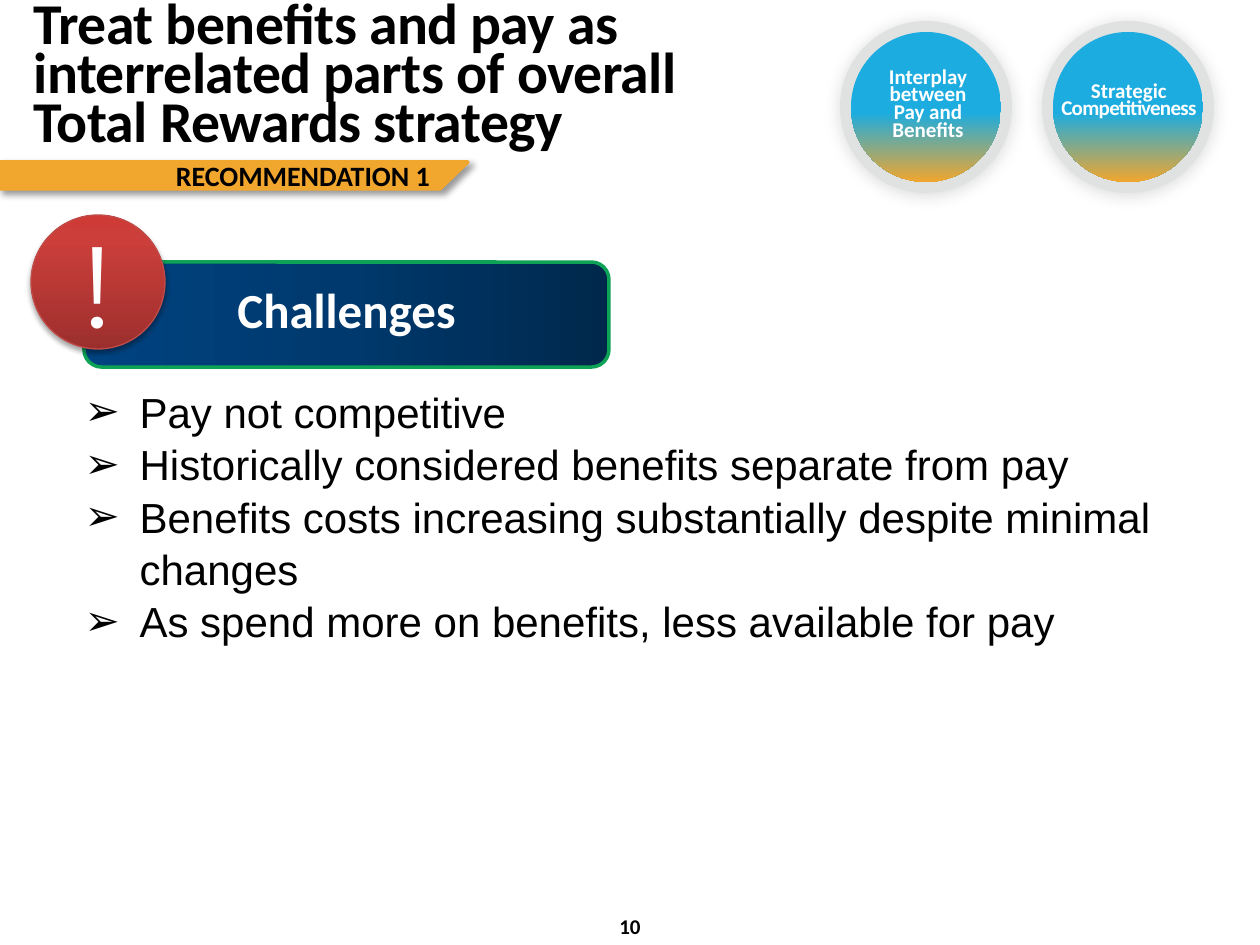
from pptx import Presentation
from pptx.dml.color import RGBColor
from pptx.enum.shapes import MSO_SHAPE
from pptx.enum.text import MSO_ANCHOR, MSO_AUTO_SIZE, PP_ALIGN
from pptx.oxml.ns import qn
from pptx.util import Pt
from lxml import etree

PX = 914400 / 126
OVAL, ROUND = MSO_SHAPE.OVAL, MSO_SHAPE.ROUNDED_RECTANGLE
LEFT, MID, RIGHT = PP_ALIGN.LEFT, PP_ALIGN.CENTER, PP_ALIGN.RIGHT

THEME = {
    "font": "Calibri", "body_font": "Arial", "mark_font": "Montserrat",
    "ink": "000000", "white": "FFFFFF", "ring": "E0E1E1",
    "gold": "F1A62E", "green": "0DA256", "red_edge": "BF4C48",
    "badge": [(0, "1DACDF"), (54, "1DACDF"), (100, "F1A62E")],
    "navy": [(0, "00284C"), (50, "00396D"), (100, "004381")],
    "red": [(0, "9C2F2D"), (80, "CB3E3A"), (100, "CE3B37")],
    "title": 33, "list": 24, "head": 28, "mark": 66, "tag": 16, "small": 12,
}

TITLE = "Treat benefits and pay as\vinterrelated parts of overall\vTotal Rewards strategy"
TAG = "RECOMMENDATION 1"
HEAD = "Challenges"
PAGE = "10"
ITEMS = [
    "Pay not competitive",
    "Historically considered benefits separate from pay",
    "Benefits costs increasing substantially despite minimal changes",
    "As spend more on benefits, less available for pay",
]
# ring left, label, label box, letter spacing of the last line in points
BADGES = [
    (840, "Interplay between\vPay and\vBenefits", (848, 64, 160, 84), 0),
    (1042, "Strategic\vCompetitiveness", (1042, 78, 174, 48), -0.4),
]


def emu(*px):
    return [round(v * PX) for v in px]


def rgb(key):
    return RGBColor.from_string(THEME[key])


def add(parent, tag, **attrs):
    return etree.SubElement(parent, qn(tag), {k: str(v) for k, v in attrs.items()})


def track(run, points):
    """Set the letter spacing of a run."""
    run._r.get_or_add_rPr().set("spc", str(round(points * 100)))


def write(frame, text, size, color="ink", align=MID, lead=None,
          bold=True, font="font"):
    frame.word_wrap = True
    para = frame.paragraphs[0]
    para.text = text
    para.alignment = align
    if lead:
        para.line_spacing = lead
    for run in para.runs:
        run.font.name, run.font.size = THEME[font], Pt(THEME[size])
        run.font.bold, run.font.color.rgb = bold, rgb(color)
    return para.runs


def paint(shape, fill, line=None, width=0, turn=0):
    """Fill with a plain colour or a gradient, and outline if asked."""
    shape.shadow.inherit = False
    if isinstance(THEME[fill], str):
        shape.fill.solid()
        shape.fill.fore_color.rgb = rgb(fill)
    else:
        shape.fill.gradient()
        shape.fill.gradient_angle = turn
        stops = shape._element.spPr.find(".//" + qn("a:gsLst"))
        for stop in list(stops):
            stops.remove(stop)
        for pos, color in THEME[fill]:
            add(add(stops, "a:gs", pos=pos * 1000), "a:srgbClr", val=color)
    if line:
        shape.line.color.rgb = rgb(line)
        shape.line.width = Pt(width)
    else:
        shape.line.fill.background()


def shade(shape, alpha, blur, dist, angle):
    effects = shape._element.spPr.find(qn("a:effectLst"))
    cast = add(effects, "a:outerShdw", blurRad=Pt(blur), dist=Pt(dist),
               dir=angle * 60000, algn="ctr", rotWithShape=0)
    add(add(cast, "a:srgbClr", val=THEME["ink"]), "a:alpha", val=alpha * 1000)


def add_badge(slide, left, label, box, space):
    shapes = slide.shapes.add_group_shape().shapes
    ring = shapes.add_shape(OVAL, *emu(left, 21, 172, 172))
    paint(ring, "ring")
    shade(ring, 15, 10, 1, 90)
    disc = shapes.add_shape(OVAL, *emu(left + 11, 32, 150, 150))
    paint(disc, "badge", turn=270)
    text = shapes.add_textbox(*emu(*box))
    runs = write(text.text_frame, label, "small", "white", lead=0.7)
    track(runs[-1], space)


def add_ribbon(slide):
    pen = slide.shapes.build_freeform(0, 189, scale=PX)
    pen.add_line_segments([(440, 189), (468, 162), (0, 162)])
    ribbon = pen.convert_to_shape()
    paint(ribbon, "gold", "gold", 2)
    shade(ribbon, 40, 4, 3, 45)
    frame = ribbon.text_frame
    frame.margin_right = emu(38)[0]
    frame.vertical_anchor = MSO_ANCHOR.MIDDLE
    write(frame, TAG, "tag", align=RIGHT)


def fill_list(body):
    body.left, body.top, body.width, body.height = emu(72, 378, 1157, 267)
    frame = body.text_frame
    frame.auto_size = MSO_AUTO_SIZE.NONE
    frame.text = "\n".join(ITEMS)
    indent = emu(55)[0]
    for para in frame.paragraphs:
        para.space_before = Pt(0)
        para.line_spacing = 1.04
        props = para._p.get_or_add_pPr()
        props.set("marL", str(indent))
        props.set("indent", str(-indent))
        add(props, "a:buFont", typeface=THEME["body_font"])
        add(props, "a:buChar", char="➢")
        font = para.runs[0].font
        font.name, font.size = THEME["body_font"], Pt(THEME["list"])
        font.color.rgb = rgb("ink")


def main():
    deck = Presentation()
    deck.slide_width, deck.slide_height = emu(1260, 945)
    slide = deck.slides.add_slide(deck.slide_layouts[1])
    title, body = slide.placeholders[0], slide.placeholders[1]

    title.left, title.top, title.width, title.height = emu(21, 0, 1218, 158)
    title.text_frame.auto_size = MSO_AUTO_SIZE.NONE
    title.text_frame.vertical_anchor = MSO_ANCHOR.MIDDLE
    for run in write(title.text_frame, TITLE, "title", align=LEFT, lead=0.7):
        track(run, -0.3)

    for badge in BADGES:
        add_badge(slide, *badge)
    add_ribbon(slide)

    banner = slide.shapes.add_shape(ROUND, *emu(84, 262, 525, 105))
    paint(banner, "navy", "green", 2, turn=180)
    write(banner.text_frame, HEAD, "head", "white", lead=0.8)

    alert = slide.shapes.add_shape(OVAL, *emu(31, 215, 134, 134))
    paint(alert, "red", "red_edge", 0.75, turn=90)
    shade(alert, 35, 3.1, 1.8, 90)
    write(alert.text_frame, "!", "mark", "white", bold=False, font="mark_font")

    fill_list(body)
    page = slide.shapes.add_textbox(*emu(0, 907, 1260, 38))
    write(page.text_frame, PAGE, "small")
    deck.save("out.pptx")


if __name__ == "__main__":
    main()
